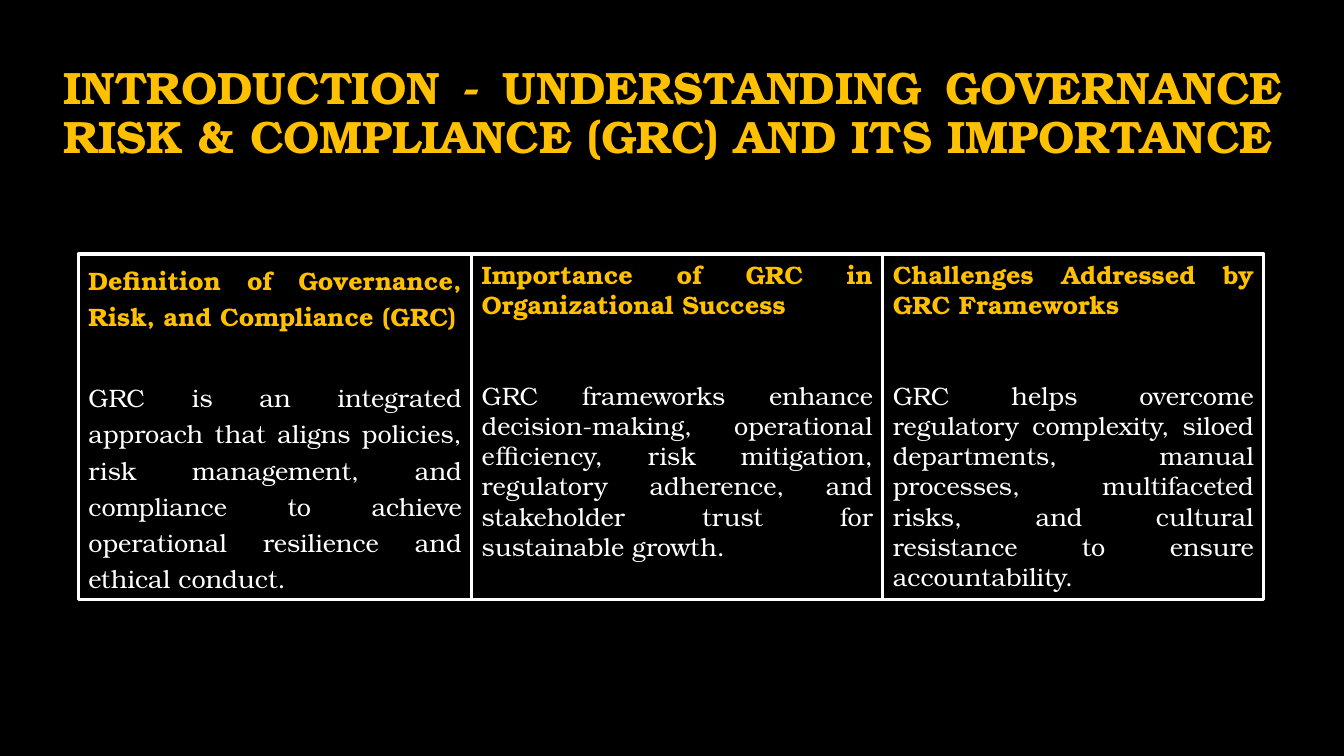
from pptx import Presentation
from pptx.dml.color import RGBColor
from pptx.enum.shapes import MSO_SHAPE
from pptx.enum.text import MSO_ANCHOR, PP_ALIGN
from pptx.util import Cm, Pt

FONT = "TeX Gyre Bonum"
GOLD, WHITE, BLACK = "FFC000", "FFFFFF", "000000"


def color(value):
    return RGBColor.from_string(value)


def style(para, size, tone, bold, spacing):
    para.alignment = PP_ALIGN.JUSTIFY
    para.line_spacing = spacing
    for span in para.runs:
        span.font.name = FONT
        span.font.size = Pt(size)
        span.font.bold = bold
        span.font.color.rgb = color(tone)


deck = Presentation()
deck.slide_width, deck.slide_height = Cm(33.87), Cm(19.05)
page = deck.slides.add_slide(deck.slide_layouts[6])
page.background.fill.solid()
page.background.fill.fore_color.rgb = color(BLACK)

title = page.shapes.add_textbox(Cm(1.35), Cm(1.96), Cm(31.22), Cm(2.29)).text_frame
title.word_wrap = True
title.vertical_anchor = MSO_ANCHOR.BOTTOM
title.text = (
    "INTRODUCTION - UNDERSTANDING GOVERNANCE RISK & COMPLIANCE (GRC) "
    "AND ITS IMPORTANCE"
)
style(title.paragraphs[0], 32.4, GOLD, True, 0.9)

columns = [
    (9.91, 1.2, 10, 32, "Definition of Governance, Risk, and Compliance (GRC)",
     "GRC is an integrated approach that aligns policies, risk management, and "
     "compliance to achieve operational resilience and ethical conduct."),
    (10.36, 1.0, 0, 43.2, "Importance of GRC in Organizational Success",
     "GRC frameworks enhance decision-making, operational efficiency, risk mitigation, "
     "regulatory adherence, and stakeholder trust for sustainable growth."),
    (9.6, 1.0, 0, 43.2, "Challenges Addressed by GRC Frameworks",
     "GRC helps overcome regulatory complexity, siloed departments, manual processes, "
     "multifaceted risks, and cultural resistance to ensure accountability."),
]

left = 1.98
for width, spacing, top_gap, body_gap, heading, body in columns:
    box = page.shapes.add_shape(
        MSO_SHAPE.RECTANGLE, Cm(left), Cm(6.4), Cm(width), Cm(8.71)
    )
    box.shadow.inherit = False
    box.fill.background()
    box.line.color.rgb = color(WHITE)
    box.line.width = Pt(2.25)
    frame = box.text_frame
    frame.word_wrap = True
    frame.vertical_anchor = MSO_ANCHOR.TOP
    frame.text = f"{heading}\n{body}"
    heading_para, body_para = frame.paragraphs
    style(heading_para, 18, GOLD, True, spacing)
    style(body_para, 18, WHITE, False, spacing)
    heading_para.space_before = Pt(top_gap)
    body_para.space_before = Pt(body_gap)
    left += width

deck.save("out.pptx")
